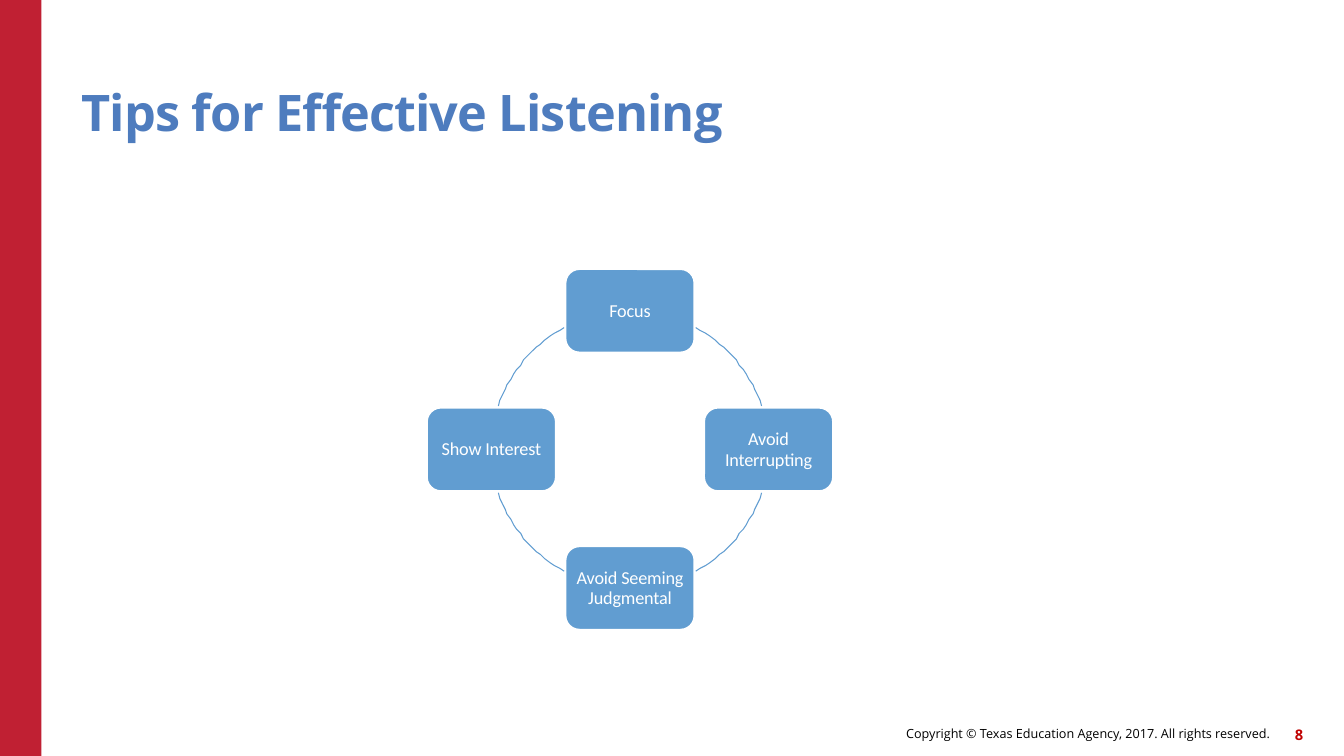
from math import cos, radians, sin

from pptx import Presentation
from pptx.dml.color import RGBColor
from pptx.enum.shapes import MSO_SHAPE as Shape
from pptx.enum.text import MSO_ANCHOR as Anchor, PP_ALIGN as Align
from pptx.util import Pt

RED = RGBColor(0xC0, 0x20, 0x33)
DARK_RED = RGBColor(0xC0, 0x00, 0x00)
TITLE_BLUE = RGBColor(0x4E, 0x7C, 0xBE)
BOX_BLUE = RGBColor(0x61, 0x9D, 0xD1)
WHITE = RGBColor(0xFF, 0xFF, 0xFF)
BLACK = RGBColor(0x00, 0x00, 0x00)

CENTER_X, CENTER_Y, RADIUS = 450, 321, 99
BOX_W, BOX_H = 92, 59.5
ARC_START, ARC_SWEEP, ARC_STEPS = 18.2, 43.6, 18
TIPS = ["Avoid\nInterrupting", "Avoid Seeming Judgmental", "Show Interest", "Focus"]


class Deck:
    heading_font = "Open Sans"
    body_font = "Calibri"

    def __init__(self):
        self.prs = Presentation()
        self.prs.slide_width, self.prs.slide_height = Pt(960), Pt(540)
        self.s = self.prs.slides.add_slide(self.prs.slide_layouts[6])

    def set_text(self, sp, text, font, size, color, align, anchor,
                 bold=False, leading=None, spacing=0):
        tf = sp.text_frame
        tf.word_wrap = True
        tf.vertical_anchor = anchor
        tf.margin_left = tf.margin_right = tf.margin_top = tf.margin_bottom = 0
        tf.text = text
        for p in tf.paragraphs:
            p.alignment = align
            p.line_spacing = leading
            p.font.name, p.font.size, p.font.bold = font, Pt(size), bold
            p.font.color.rgb = color
            if spacing:
                for r in p.runs:
                    r._r.get_or_add_rPr().set("spc", str(spacing))

    def text(self, x, y, w, h, text, size, color, align=Align.RIGHT,
             anchor=Anchor.MIDDLE, **style):
        sp = self.s.shapes.add_textbox(Pt(x), Pt(y), Pt(w), Pt(h))
        self.set_text(sp, text, self.heading_font, size, color, align, anchor, **style)

    def bar(self, x, y, w, h, color):
        sp = self.s.shapes.add_shape(Shape.RECTANGLE, Pt(x), Pt(y), Pt(w), Pt(h))
        sp.shadow.inherit = False
        sp.fill.solid()
        sp.fill.fore_color.rgb = color
        sp.line.fill.background()

    def box(self, cx, cy, text):
        sp = self.s.shapes.add_shape(
            Shape.ROUNDED_RECTANGLE, Pt(cx - BOX_W / 2), Pt(cy - BOX_H / 2),
            Pt(BOX_W), Pt(BOX_H))
        sp.shadow.inherit = False
        sp.fill.solid()
        sp.fill.fore_color.rgb = BOX_BLUE
        sp.line.color.rgb = WHITE
        sp.line.width = Pt(1.25)
        self.set_text(sp, text, self.body_font, 13, WHITE, Align.CENTER,
                      Anchor.MIDDLE, leading=Pt(14.6), spacing=-10)

    def arc(self, cx, cy, radius, angles):
        points = [(cx + radius * cos(a), cy + radius * sin(a)) for a in angles]
        builder = self.s.shapes.build_freeform(*points[0], scale=Pt(1))
        builder.add_line_segments(points[1:], close=False)
        sp = builder.convert_to_shape()
        sp.shadow.inherit = False
        sp.fill.background()
        sp.line.color.rgb = BOX_BLUE
        sp.line.width = Pt(0.75)


def main():
    deck = Deck()
    deck.bar(0, 0, 29.5, 540, RED)
    deck.text(442, 512.6, 465, 23, "Copyright © Texas Education Agency, 2017. "
              "All rights reserved.", 9, BLACK)
    deck.text(900.7, 513.4, 30.2, 23, "8", 10.5, DARK_RED, bold=True)
    deck.text(58.3, 32.4, 792, 69.1, "Tips for Effective Listening", 36, TITLE_BLUE,
              Align.LEFT, Anchor.BOTTOM, bold=True, leading=0.9, spacing=-60)

    for i, tip in enumerate(TIPS):
        turn = radians(90 * i)
        deck.box(CENTER_X + RADIUS * cos(turn), CENTER_Y + RADIUS * sin(turn), tip)
        start = ARC_START if i % 2 == 0 else 90 - ARC_START - ARC_SWEEP
        deck.arc(CENTER_X, CENTER_Y, RADIUS,
                 [turn + radians(start + ARC_SWEEP * k / ARC_STEPS)
                  for k in range(ARC_STEPS + 1)])

    deck.prs.save("out.pptx")


if __name__ == "__main__":
    main()
